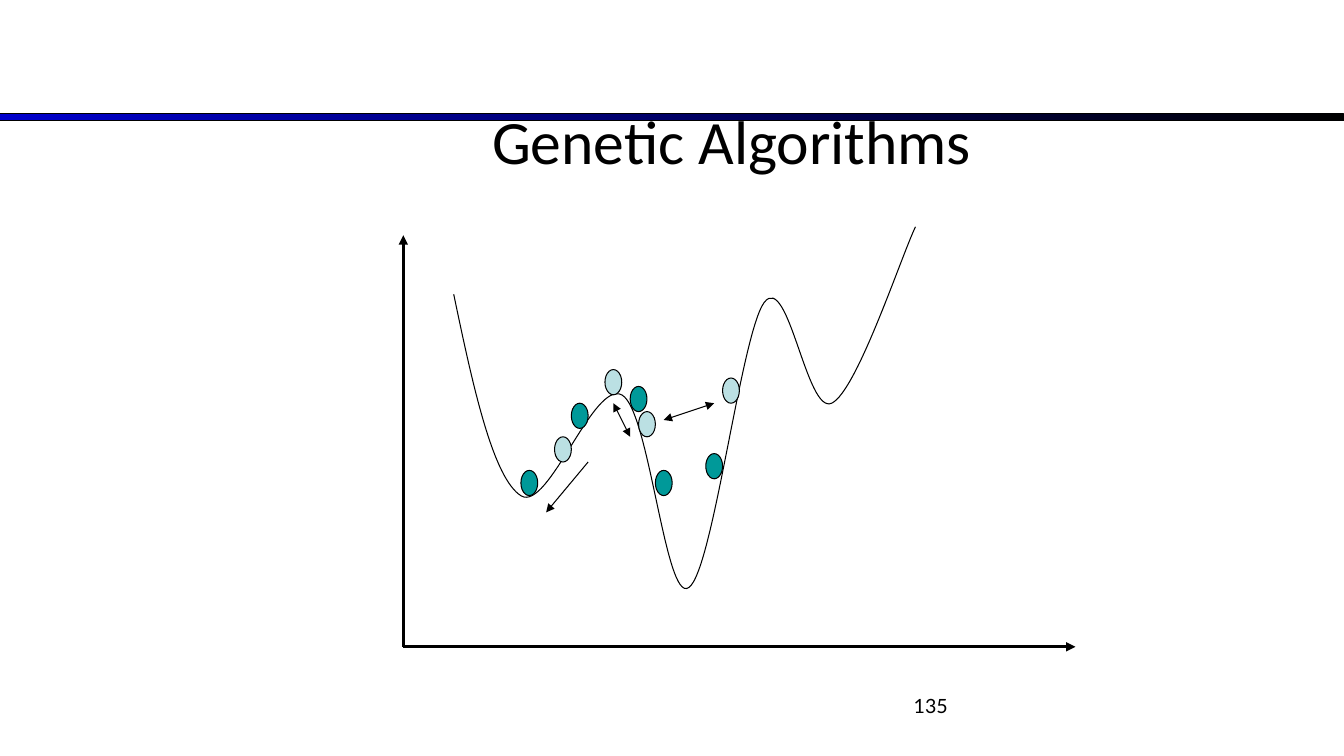
import pptx
import pptx.dml.color
import pptx.enum.shapes
import pptx.enum.text
import pptx.oxml
import pptx.oxml.ns
import pptx.util

Inches = pptx.util.Inches
Pt = pptx.util.Pt
qn = pptx.oxml.ns.qn
SHAPE = pptx.enum.shapes.MSO_SHAPE
ALIGN = pptx.enum.text.PP_ALIGN
ANCHOR = pptx.enum.text.MSO_ANCHOR

GRID = 1 / 12
LIGHT, TEAL, BLACK = "BBE0E3", "009999", "000000"
CURVE = [
    (0.5, 0.67),
    (0.69, 1.58), (0.89, 2.5), (1.17, 2.67),
    (1.44, 2.83), (1.89, 1.51), (2.17, 1.67),
    (2.44, 1.82), (2.6, 3.74), (2.83, 3.58),
    (3.07, 3.43), (3.35, 1.06), (3.58, 0.75),
    (3.82, 0.44), (4, 1.87), (4.25, 1.75),
    (4.5, 1.63), (4.94, 0.29), (5.08, 0),
]
PARENTS = [(24, 17), (18, 25), (28, 22), (38, 18)]
CHILDREN = [(14, 29), (30, 29), (36, 27), (20, 21), (27, 19)]
AXES = [((0, 50), (0, 1)), ((0, 50), (80, 50))]
CROSSOVERS = [((31, 23), (37, 21)), ((25, 21), (27, 25))]
DESCENT = ((22, 28), (17, 34))


def rgb(value):
    return pptx.dml.color.RGBColor.from_string(value)


def set_line(sp, width=0.75):
    sp.line.color.rgb = rgb(BLACK)
    sp.line.width = Pt(width)


def add_rule(s, x, y, w, h):
    sp = s.shapes.add_shape(SHAPE.RECTANGLE, *map(Inches, (x, y, w, h)))
    sp.shadow.inherit = False
    sp.fill.gradient()
    sp.fill.gradient_angle = 0
    for stop, color, position in zip(sp.fill.gradient_stops, ("0000CC", BLACK), (0, 1)):
        stop.color.rgb = rgb(color)
        stop.position = position
    set_line(sp)


def add_text(s, x, y, w, h, text, align, anchor, font):
    tf = s.shapes.add_textbox(*map(Inches, (x, y, w, h))).text_frame
    tf.word_wrap = True
    tf.vertical_anchor = anchor
    p = tf.paragraphs[0]
    p.alignment = align
    r = p.add_run()
    r.text = text
    for name, value in font.items():
        setattr(r.font, name, value)
    r.font.color.rgb = rgb(BLACK)


def add_arrow(s, x, y, start, end, width=0.75, ends=("tailEnd",)):
    points = [Inches(o + v * GRID) for point in (start, end) for o, v in zip((x, y), point)]
    sp = s.shapes.add_connector(pptx.enum.shapes.MSO_CONNECTOR.STRAIGHT, *points)
    set_line(sp, width)
    ln = sp.line._get_or_add_ln()
    for tag in ends:
        ln.append(ln.makeelement(qn("a:" + tag), {"type": "triangle"}))
    spPr = sp._element.spPr
    spPr.append(spPr.makeelement(qn("a:effectLst"), {}))


def add_curve(s, x, y):
    points = [(Inches(x + dx), Inches(y + dy)) for dx, dy in CURVE]
    builder = s.shapes.build_freeform(*points[0])
    builder.add_line_segments(points[1:], close=False)
    sp = builder.convert_to_shape()
    sp.shadow.inherit = False
    sp.fill.background()
    set_line(sp)
    outline = next(sp._element.iter(qn("a:path")))
    segments = outline.findall(qn("a:lnTo"))
    for i in range(0, len(segments), 3):
        bezier = outline.makeelement(qn("a:cubicBezTo"), {})
        outline.append(bezier)
        for segment in segments[i:i + 3]:
            bezier.append(segment[0])
            outline.remove(segment)


def add_individual(s, x, y, cell, color):
    col, row = cell
    box = (x + col * GRID, y + row * GRID, 2 * GRID, 3 * GRID)
    sp = s.shapes.add_shape(SHAPE.OVAL, *map(Inches, box))
    sp.shadow.inherit = False
    sp.fill.solid()
    sp.fill.fore_color.rgb = rgb(color)
    set_line(sp)


def add_landscape(s, x, y):
    for start, end in AXES:
        add_arrow(s, x, y, start, end, 2.25)
    add_curve(s, x, y)
    for color, cells in ((LIGHT, PARENTS), (TEAL, CHILDREN)):
        for cell in cells:
            add_individual(s, x, y, cell, color)
    for start, end in CROSSOVERS:
        add_arrow(s, x, y, start, end, ends=("headEnd", "tailEnd"))
    add_arrow(s, x, y, *DESCENT)


def main():
    prs = pptx.Presentation()
    prs.slide_width, prs.slide_height = Inches(13.33), Inches(7.5)
    s = prs.slides.add_slide(prs.slide_layouts[6])
    add_rule(s, 0, 1.13, 13.33, 0.07)
    add_text(s, 7.17, 6.83, 2.33, 0.52, "135", ALIGN.RIGHT, ANCHOR.TOP,
             {"name": "Lato", "size": Pt(14)})
    add_text(s, 3, 0.94, 8.52, 0.9, "Genetic Algorithms", ALIGN.CENTER, ANCHOR.MIDDLE,
             {"name": "Calibri", "size": Pt(44)})
    add_landscape(s, 4, 2.25)
    prs.save("out.pptx")


if __name__ == "__main__":
    main()
